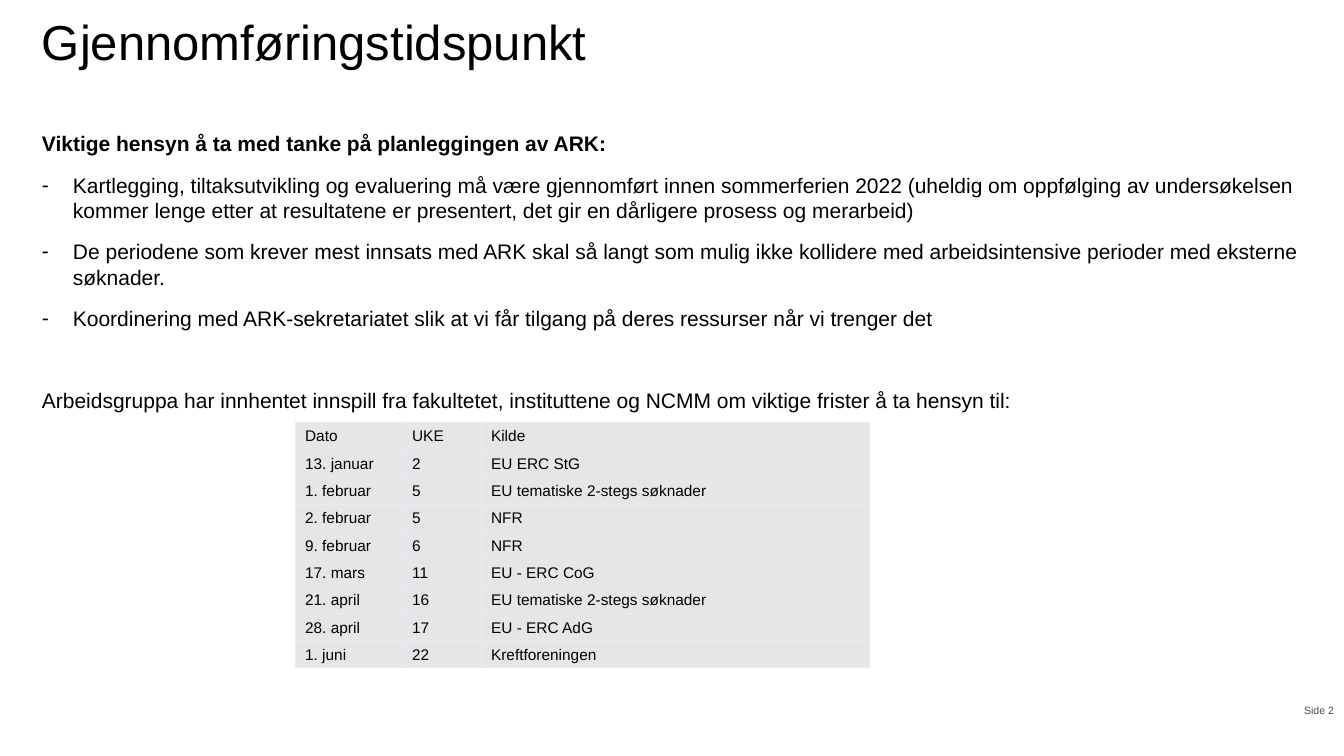
from lxml.etree import SubElement
from pptx import Presentation
from pptx.dml.color import RGBColor
from pptx.enum.text import MSO_ANCHOR, PP_ALIGN
from pptx.oxml.ns import qn
from pptx.util import Pt

TITLE = "Gjennomføringstidspunkt"
HEADING = "Viktige hensyn å ta med tanke på planleggingen av ARK:"
CONSIDERATIONS = [
    "Kartlegging, tiltaksutvikling og evaluering må være gjennomført innen sommerferien 2022 "
    "(uheldig om oppfølging av undersøkelsen kommer lenge etter at resultatene er presentert, "
    "det gir en dårligere prosess og merarbeid)",
    "De periodene som krever mest innsats med ARK skal så langt som mulig ikke kollidere med "
    "arbeidsintensive perioder med eksterne søknader.",
    "Koordinering med ARK-sekretariatet slik at vi får tilgang på deres ressurser når vi trenger det",
]
TABLE_INTRO = ("Arbeidsgruppa har innhentet innspill fra fakultetet, instituttene og NCMM "
               "om viktige frister å ta hensyn til:")
DEADLINES = [
    ("Dato", "UKE", "Kilde"),
    ("13. januar", "2", "EU ERC StG"),
    ("1. februar", "5", "EU tematiske 2-stegs søknader"),
    ("2. februar", "5", "NFR"),
    ("9. februar", "6", "NFR"),
    ("17. mars", "11", "EU - ERC CoG"),
    ("21. april", "16", "EU tematiske 2-stegs søknader"),
    ("28. april", "17", "EU - ERC AdG"),
    ("1. juni", "22", "Kreftforeningen"),
]
PAGE_NUMBER = "Side 2"

FONT = "Arial"
BLACK = RGBColor(0x00, 0x00, 0x00)
FOOTER_GREY = RGBColor(0x52, 0x4B, 0x48)
CELL_GREY = RGBColor(0xE7, 0xE6, 0xE6)
BORDER_BLUE = RGBColor(0xE6, 0xEC, 0xFF)

LEFT, CONTENT_WIDTH = 42, 1260
BULLET_INDENT = 31
TABLE_LEFT, TABLE_TOP, TABLE_HEIGHT = 295, 422, 246
COLUMN_WIDTHS = [107, 79, 388]
CELL_TOP, CELL_BOTTOM = 6, 1


def px(length):
    return round(length * 914400 / 100.8)


def style(para, size, color=BLACK, bold=False):
    para.font.name = FONT
    para.font.size = Pt(size)
    para.font.color.rgb = color
    para.font.bold = bold


def add_box(page, left, top, width, height, lines):
    """Add a wrapping text box without insets, one paragraph per line."""
    box = page.shapes.add_textbox(px(left), px(top), px(width), px(height))
    frame = box.text_frame
    frame.word_wrap = True
    frame.margin_left = frame.margin_right = frame.margin_top = frame.margin_bottom = 0
    frame.text = "\n".join(lines)
    return frame


def add_dash(para):
    properties = para._p.get_or_add_pPr()
    properties.set("marL", str(px(BULLET_INDENT)))
    properties.set("indent", str(-px(BULLET_INDENT)))
    SubElement(properties, qn("a:buFont")).set("typeface", FONT)
    SubElement(properties, qn("a:buChar")).set("char", "-")


def fill_cell(cell, text):
    cell.text = text
    cell.margin_top, cell.margin_bottom = px(CELL_TOP), px(CELL_BOTTOM)
    style(cell.text_frame.paragraphs[0], 11)
    properties = cell._tc.get_or_add_tcPr()
    for side in ("a:lnL", "a:lnR", "a:lnT", "a:lnB"):
        line = SubElement(properties, qn(side), w=str(Pt(0.5)))
        fill = SubElement(line, qn("a:solidFill"))
        SubElement(fill, qn("a:srgbClr"), val=str(BORDER_BLUE))
    cell.fill.solid()
    cell.fill.fore_color.rgb = CELL_GREY


def add_body(page):
    lines = [HEADING, *CONSIDERATIONS, TABLE_INTRO]
    frame = add_box(page, LEFT, 131, CONTENT_WIDTH, 520, lines)
    for para in frame.paragraphs:
        if para.text in CONSIDERATIONS:
            para.space_before = Pt(11.5)
            add_dash(para)
        elif para.text == TABLE_INTRO:
            para.space_before = Pt(41)
        style(para, 15, bold=para.text == HEADING)


def add_deadlines(page):
    table = page.shapes.add_table(
        len(DEADLINES), len(COLUMN_WIDTHS), px(TABLE_LEFT), px(TABLE_TOP),
        px(sum(COLUMN_WIDTHS)), px(TABLE_HEIGHT)).table
    table.first_row = table.horz_banding = False
    for column, width in zip(table.columns, COLUMN_WIDTHS):
        column.width = px(width)
    for row, texts in zip(table.rows, DEADLINES):
        row.height = px(TABLE_HEIGHT / len(DEADLINES))
        for cell, text in zip(row.cells, texts):
            fill_cell(cell, text)


def main():
    deck = Presentation()
    deck.slide_width, deck.slide_height = px(1344), px(756)
    page = deck.slides.add_slide(deck.slide_layouts[6])

    title = add_box(page, LEFT, 18, CONTENT_WIDTH, 83, [TITLE]).paragraphs[0]
    title.line_spacing = 0.9
    style(title, 35)

    add_body(page)
    add_deadlines(page)

    footer = add_box(page, 1278, 690, 56, 40, [PAGE_NUMBER])
    footer.vertical_anchor = MSO_ANCHOR.MIDDLE
    footer.paragraphs[0].alignment = PP_ALIGN.RIGHT
    style(footer.paragraphs[0], 7.5, FOOTER_GREY)

    deck.save("out.pptx")


if __name__ == "__main__":
    main()
